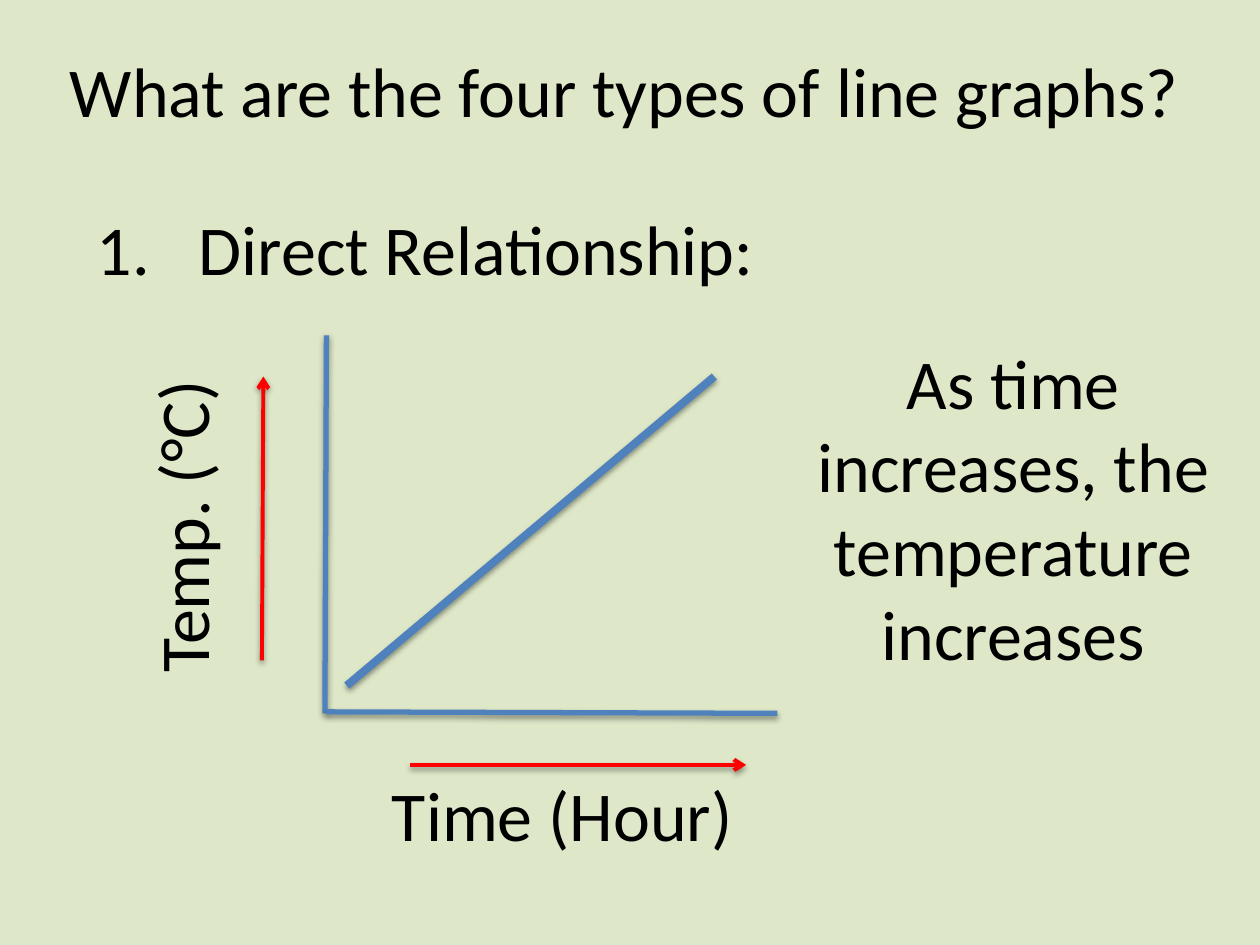
import pptx
import pptx.dml.color
import pptx.enum.shapes
import pptx.enum.text
import pptx.oxml
import pptx.oxml.ns
import pptx.util
from lxml import etree

Cm, Pt = pptx.util.Cm, pptx.util.Pt
Align = pptx.enum.text.PP_ALIGN

# Content: positions in cm (left, top, width, height)
BACKGROUND, BLACK, BLUE, RED = "DEE8C8", "000000", "4F81BD", "FF0000"
LINE_HEIGHT = 1.96
title = ("What are the four types of line graphs?",
         (0.2, 0.84, 24.77, LINE_HEIGHT), Align.CENTER)
relationship = ("Direct Relationship:", (1.7, 4.01, 22.02, LINE_HEIGHT), Align.LEFT)
temp_label = ("Temp. (°C)", (0.13, 9.3, 7.06, LINE_HEIGHT), Align.LEFT)
time_label = ("Time (Hour)", (6.99, 15.42, 8.69, LINE_HEIGHT), Align.CENTER)
explanation = ("As time increases, the temperature increases",
               (15.88, 6.71, 9.09, 7.09), Align.CENTER)

# Lines: start, end, colour, width in points, arrowhead
graph_lines = [
    ((6.58, 6.76), (6.55, 14.38), BLUE, 3, False),      # temperature axis
    ((6.58, 14.35), (15.67, 14.38), BLUE, 3, False),    # time axis
    ((5.28, 13.31), (5.31, 7.59), RED, 2.25, True),     # rising temperature
    ((8.26, 15.42), (15.04, 15.42), RED, 2.25, True),   # passing time
    ((6.99, 13.82), (14.4, 7.59), BLUE, 4.5, False),    # direct relationship
]

FRAME_FORMAT = {
    "word_wrap": True,
    "auto_size": pptx.enum.text.MSO_AUTO_SIZE.SHAPE_TO_FIT_TEXT,
    "vertical_anchor": pptx.enum.text.MSO_ANCHOR.TOP,
}
FONT_FORMAT = {"name": "Calibri", "size": Pt(40)}
SHADOW = (
    f'<a:effectLst {pptx.oxml.ns.nsdecls("a")}>'
    '<a:outerShdw blurRad="40000" dist="20000" dir="5400000" rotWithShape="0">'
    '<a:srgbClr val="000000"><a:alpha val="38000"/></a:srgbClr>'
    '</a:outerShdw></a:effectLst>'
)


def color(hex_value):
    return pptx.dml.color.RGBColor.from_string(hex_value)


def apply(target, values):
    for key, value in values.items():
        setattr(target, key, value)


def write(holder, text, box, alignment):
    apply(holder, dict(zip(("left", "top", "width", "height"), map(Cm, box))))
    frame = holder.text_frame
    apply(frame, FRAME_FORMAT)
    paragraph = frame.paragraphs[0]
    paragraph.alignment = alignment
    run = paragraph.add_run()
    run.text = text
    apply(run.font, FONT_FORMAT)
    run.font.color.rgb = color(BLACK)
    return holder


def add_text(slide, text, box, alignment):
    return write(slide.shapes.add_textbox(*map(Cm, box)), text, box, alignment)


def add_line(slide, start, end, line_color, width, arrow):
    connector = slide.shapes.add_connector(
        pptx.enum.shapes.MSO_CONNECTOR.STRAIGHT, *map(Cm, start + end))
    connector.line.color.rgb = color(line_color)
    connector.line.width = Pt(width)
    if arrow:
        etree.SubElement(connector.line._get_or_add_ln(),
                         pptx.oxml.ns.qn("a:tailEnd"), type="arrow")
    connector._element.spPr.append(pptx.oxml.parse_xml(SHADOW))


def number(holder):
    properties = holder.text_frame.paragraphs[0]._p.get_or_add_pPr()
    indent = Cm(2.06)
    properties.set("marL", str(indent))
    properties.set("indent", str(-indent))
    etree.SubElement(properties, pptx.oxml.ns.qn("a:buAutoNum"), type="arabicPeriod")


def main():
    deck = pptx.Presentation()
    deck.slide_width, deck.slide_height = Cm(25.4), Cm(19.05)
    slide = deck.slides.add_slide(deck.slide_layouts.get_by_name("Title Only"))
    slide.background.fill.solid()
    slide.background.fill.fore_color.rgb = color(BACKGROUND)

    # Headings
    write(slide.shapes.title, *title)
    number(add_text(slide, *relationship))

    # Graph
    for line in graph_lines:
        add_line(slide, *line)
    add_text(slide, *temp_label).rotation = 270
    add_text(slide, *time_label)

    # Explanation
    add_text(slide, *explanation)
    deck.save("out.pptx")


if __name__ == "__main__":
    main()
